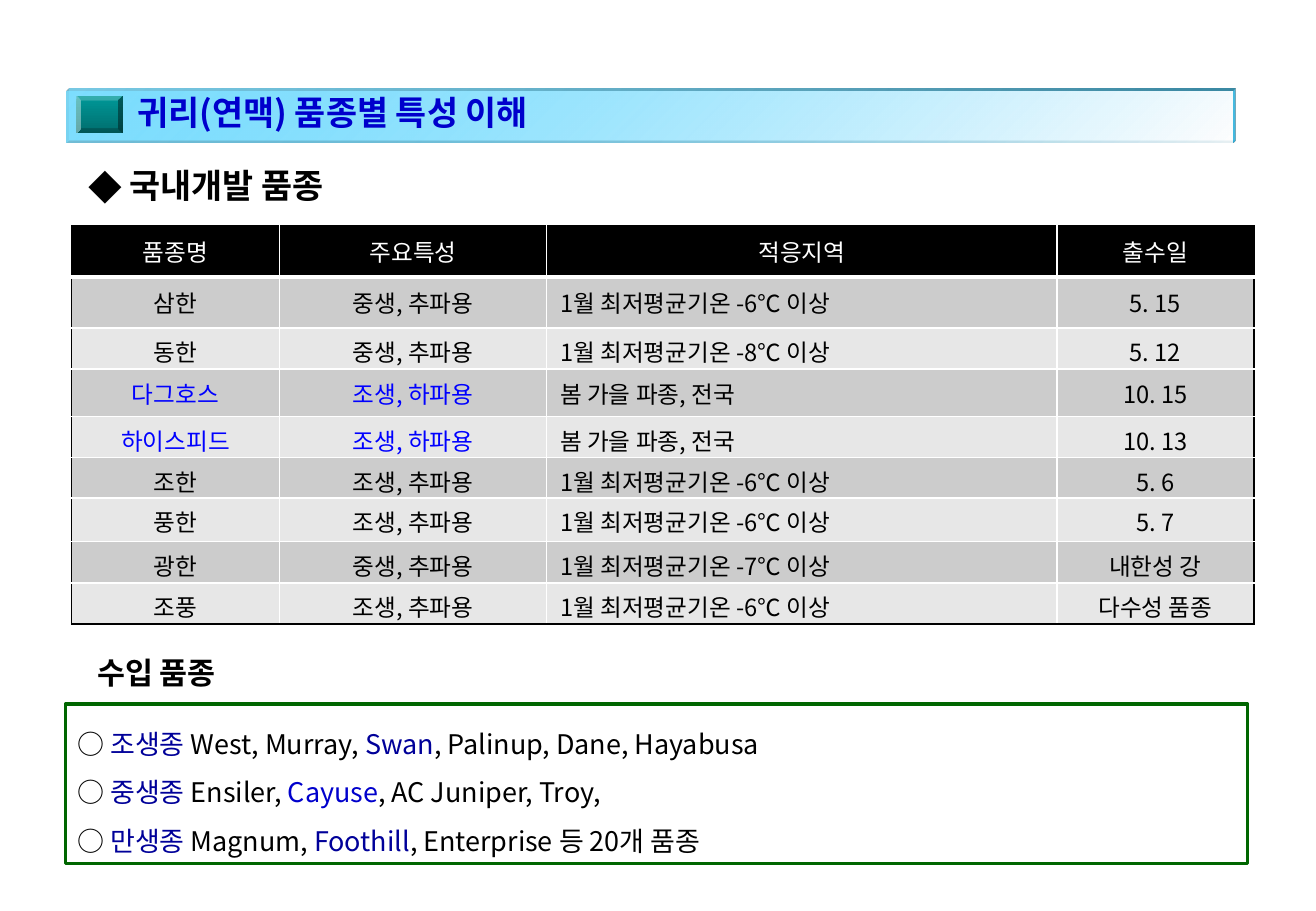
from dataclasses import dataclass

from lxml.etree import SubElement
from pptx import Presentation
from pptx.dml.color import RGBColor
from pptx.enum.shapes import MSO_SHAPE
from pptx.enum.text import MSO_ANCHOR, MSO_AUTO_SIZE, PP_ALIGN
from pptx.oxml import parse_xml
from pptx.oxml.ns import nsdecls, qn
from pptx.util import Cm, Pt


@dataclass(frozen=True)
class Theme:
    font: str = "Noto Sans CJK KR"
    black: str = "000000"
    white: str = "FFFFFF"
    title_blue: str = "0000CC"
    highlight: str = "0000FF"
    navy: str = "000099"
    sky: str = "33CCFF"
    teal: str = "009999"
    dark_teal: str = "006D6D"
    green: str = "006600"
    odd_row: str = "CCCCCC"
    even_row: str = "E7E7E7"
    title_size: int = 20
    subtitle_size: int = 18
    list_size: int = 16
    table_size: int = 14


THEME = Theme()

COLUMN_WIDTHS = (4.34, 5.59, 10.67, 4.11)
ROW_HEIGHTS = (1.07, 1.07, 0.86, 0.99, 0.79, 0.76, 0.91, 0.86, 0.86)
VARIETIES = (
    ("품종명", "주요특성", "적응지역", "출수일"),
    ("삼한", "중생, 추파용", "1월 최저평균기온 -6℃ 이상", "5. 15"),
    ("동한", "중생, 추파용", "1월 최저평균기온 -8℃ 이상", "5. 12"),
    ("다그호스", "조생, 하파용", "봄 가을 파종, 전국", "10. 15"),
    ("하이스피드", "조생, 하파용", "봄 가을 파종, 전국", "10. 13"),
    ("조한", "조생, 추파용", "1월 최저평균기온 -6℃ 이상", "5. 6"),
    ("풍한", "조생, 추파용", "1월 최저평균기온 -6℃ 이상", "5. 7"),
    ("광한", "중생, 추파용", "1월 최저평균기온 -7℃ 이상", "내한성 강"),
    ("조풍", "조생, 추파용", "1월 최저평균기온 -6℃ 이상", "다수성 품종"),
)
IMPORTED = (
    ("조생종 ", "West, Murray, ", "Swan", THEME.navy, ", Palinup, Dane, Hayabusa"),
    ("중생종 ", "Ensiler, ", "Cayuse", THEME.title_blue, ", AC Juniper, Troy,"),
    ("만생종 ", "Magnum, ", "Foothill", THEME.navy, ", Enterprise 등 20개 품종"),
)


def rgb(color):
    return RGBColor.from_string(color)


def add_run(paragraph, text, size, color=THEME.black, bold=False):
    run = paragraph.add_run()
    run.text = text
    font = run.font
    font.size = Pt(size)
    font.bold = bold
    font.color.rgb = rgb(color)
    font.name = THEME.font
    SubElement(font._element, qn("a:ea")).set("typeface", THEME.font)


def add_label(shapes, box, text, size, color=THEME.black):
    shape = shapes.add_textbox(*map(Cm, box))
    frame = shape.text_frame
    frame.word_wrap = True
    frame.auto_size = MSO_AUTO_SIZE.SHAPE_TO_FIT_TEXT
    add_run(frame.paragraphs[0], text, size, color, bold=True)
    return frame


def add_gradient_shape(shapes, kind, box, colors, angle):
    shape = shapes.add_shape(kind, *map(Cm, box))
    shape.shadow.inherit = False
    shape.line.fill.background()
    shape.fill.gradient()
    shape.fill.gradient_angle = angle
    for stop, color in zip(shape.fill.gradient_stops, colors):
        stop.color.rgb = rgb(color)
    return shape


def set_opacity(shape, percents):
    colors = shape._element.spPr.iter(qn("a:srgbClr"))
    for color, percent in zip(colors, percents):
        SubElement(color, qn("a:alpha")).set("val", str(percent * 1000))


def extrude(shape, color):
    properties = shape._element.spPr
    properties.append(parse_xml(
        f'<a:scene3d {nsdecls("a")}><a:camera prst="legacyObliqueTopRight"/>'
        '<a:lightRig rig="legacyFlat3" dir="b"/></a:scene3d>'))
    properties.append(parse_xml(
        f'<a:sp3d {nsdecls("a")} extrusionH="57150" prstMaterial="legacyMatte">'
        f'<a:extrusionClr><a:srgbClr val="{color}"/></a:extrusionClr></a:sp3d>'))


def add_banner(slide):
    shapes = slide.shapes.add_group_shape().shapes
    bar = add_gradient_shape(shapes, MSO_SHAPE.RECTANGLE, (1.4, 1.9, 24.38, 1.09),
                             (THEME.sky, THEME.white), 315)
    set_opacity(bar, (40, 90))
    extrude(bar, THEME.sky)
    add_gradient_shape(shapes, MSO_SHAPE.BEVEL, (1.6, 2, 0.97, 0.79),
                       (THEME.teal, THEME.dark_teal), 270)
    add_label(shapes, (2.62, 1.8, 23.06, 1.12), "귀리(연맥) 품종별 특성 이해",
              THEME.title_size, THEME.title_blue)


def add_bullet(paragraph, mark, indent):
    properties = paragraph._p.get_or_add_pPr()
    properties.set("marL", str(Cm(indent)))
    properties.set("indent", str(-Cm(indent)))
    SubElement(properties, qn("a:buFont")).set("typeface", THEME.font)
    SubElement(properties, qn("a:buChar")).set("char", mark)


def add_border(cell, side, color, width):
    cell._tc.get_or_add_tcPr().append(parse_xml(
        f'<a:ln{side} {nsdecls("a")} w="{Pt(width)}"><a:solidFill>'
        f'<a:srgbClr val="{color}"/></a:solidFill></a:ln{side}>'))


def style_cell(cell, row, column):
    last_row, last_column = len(ROW_HEIGHTS) - 1, len(COLUMN_WIDTHS) - 1
    outer = {"L": column == 0, "R": column == last_column,
             "T": row == 0, "B": row == last_row}
    for side, is_outer in outer.items():
        width = 3 if row == 0 and side == "B" else 1
        add_border(cell, side, THEME.black if is_outer else THEME.white, width)
    cell.fill.solid()
    body = THEME.odd_row if row % 2 else THEME.even_row
    cell.fill.fore_color.rgb = rgb(body if row else THEME.black)
    cell.vertical_anchor = MSO_ANCHOR.MIDDLE
    cell.margin_left = cell.margin_right = Cm(0.28)
    cell.margin_top = cell.margin_bottom = Cm(0.13)


def text_color(row, column):
    if row == 0:
        return THEME.white
    spring_sown = "하파용" in VARIETIES[row][1]
    return THEME.highlight if spring_sown and column < 2 else THEME.black


def add_variety_table(slide):
    table = slide.shapes.add_table(
        len(ROW_HEIGHTS), len(COLUMN_WIDTHS), Cm(1.5), Cm(4.72),
        Cm(sum(COLUMN_WIDTHS)), Cm(sum(ROW_HEIGHTS))).table
    for column, width in zip(table.columns, COLUMN_WIDTHS):
        column.width = Cm(width)
    for row, height in zip(table.rows, ROW_HEIGHTS):
        row.height = Cm(height)
    for row, values in enumerate(VARIETIES):
        for column, value in enumerate(values):
            cell = table.cell(row, column)
            style_cell(cell, row, column)
            paragraph = cell.text_frame.paragraphs[0]
            is_region = row > 0 and column == 2
            paragraph.alignment = PP_ALIGN.LEFT if is_region else PP_ALIGN.CENTER
            add_run(paragraph, value, THEME.table_size, text_color(row, column))


def add_imported_list(slide):
    shape = slide.shapes.add_shape(
        MSO_SHAPE.RECTANGLE, Cm(1.37), Cm(14.73), Cm(24.71), Cm(3.33))
    shape.shadow.inherit = False
    shape.fill.background()
    shape.line.color.rgb = rgb(THEME.green)
    shape.line.width = Pt(2.25)
    frame = shape.text_frame
    frame.word_wrap = True
    frame.auto_size = MSO_AUTO_SIZE.SHAPE_TO_FIT_TEXT
    frame.vertical_anchor = MSO_ANCHOR.MIDDLE
    for index, (season, before, chosen, color, after) in enumerate(IMPORTED):
        paragraph = frame.add_paragraph() if index else frame.paragraphs[0]
        paragraph.alignment = PP_ALIGN.LEFT
        paragraph.line_spacing = 1.5
        add_run(paragraph, "○ ", THEME.list_size)
        add_run(paragraph, season, THEME.list_size, THEME.navy)
        add_run(paragraph, before, THEME.list_size)
        add_run(paragraph, chosen, THEME.list_size, color)
        add_run(paragraph, after, THEME.list_size)


def main():
    presentation = Presentation()
    presentation.slide_width, presentation.slide_height = Cm(27.51), Cm(19.05)
    slide = presentation.slides.add_slide(presentation.slide_layouts[6])
    add_banner(slide)
    domestic = add_label(slide.shapes, (1.6, 3.33, 5.99, 1.12), "국내개발 품종",
                         THEME.title_size)
    add_bullet(domestic.paragraphs[0], "◆", 0.86)
    add_variety_table(slide)
    add_imported_list(slide)
    imported = add_label(slide.shapes, (1.4, 13.56, 3.99, 1.02), "수입 품종",
                         THEME.subtitle_size)
    imported.margin_left = Cm(0.63)
    presentation.save("out.pptx")


if __name__ == "__main__":
    main()
